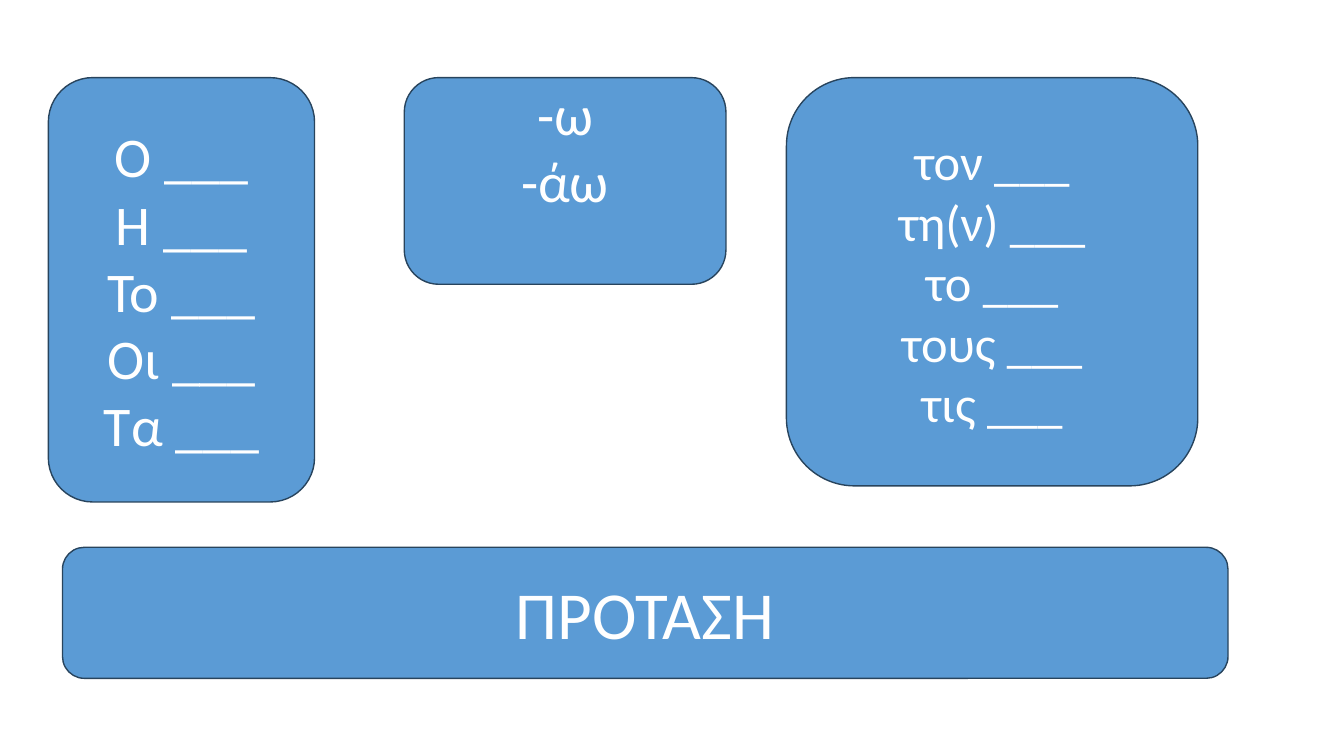
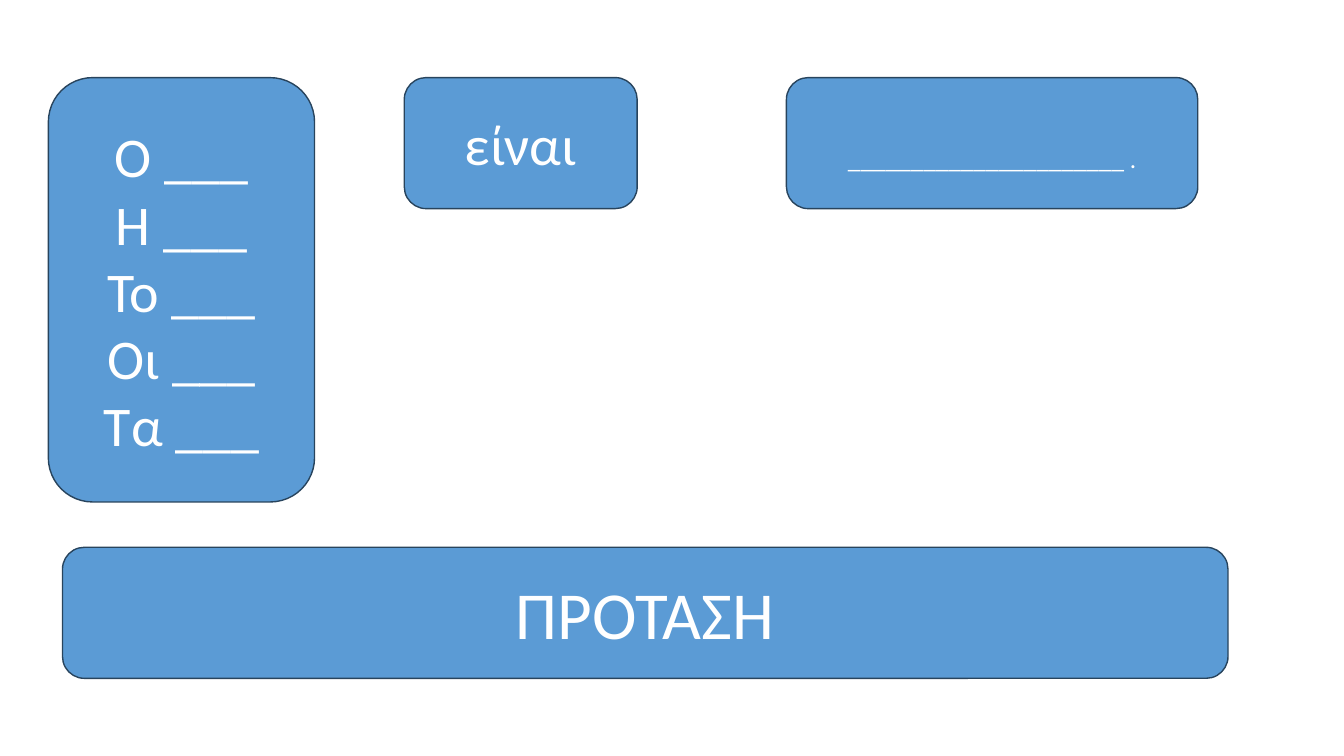
import pptx
import pptx.dml.color
import pptx.enum.shapes
import pptx.enum.text
import pptx.util

Inches = pptx.util.Inches
RGBColor = pptx.dml.color.RGBColor

BLUE = RGBColor(0x5B, 0x9B, 0xD5)
NAVY = RGBColor(0x28, 0x44, 0x5D)
WHITE = RGBColor(0xFF, 0xFF, 0xFF)

# Columns and heights shared by the slides
TOP = 0.77
SUBJECT_LEFT, VERB_LEFT, OBJECT_LEFT = 0.48, 4.01, 7.8
OBJECT_WIDTH = 4.08
ROW_HEIGHT = 1.3
BLANK = "___"


class SentenceDeck:
    """Holds the box style and the current slide."""

    FONT = {"name": "Calibri", "bold": False}
    FRAME = {"word_wrap": True,
             "vertical_anchor": pptx.enum.text.MSO_ANCHOR.MIDDLE}

    def __init__(self):
        self.deck = pptx.Presentation()
        self.deck.slide_width = Inches(13.33)
        self.deck.slide_height = Inches(7.5)
        self.page = None

    def add_page(self):
        self.page = self.deck.slides.add_slide(self.deck.slide_layouts[6])

    def add_box(self, left, top, width, height, lines, size, **margins):
        """Draw a rounded box with one centred paragraph per line."""
        box = self.page.shapes.add_shape(
            pptx.enum.shapes.MSO_SHAPE.ROUNDED_RECTANGLE,
            Inches(left), Inches(top), Inches(width), Inches(height))
        box.shadow.inherit = False
        box.fill.solid()
        box.fill.fore_color.rgb = BLUE
        box.line.color.rgb = NAVY
        box.line.width = pptx.util.Pt(1)

        frame = box.text_frame
        for name, value in {**self.FRAME, **margins}.items():
            setattr(frame, name, value)
        for index, line in enumerate(lines):
            para = frame.paragraphs[0] if index == 0 else frame.add_paragraph()
            para.alignment = pptx.enum.text.PP_ALIGN.CENTER
            span = para.add_run()
            span.text = line
            span.font.color.rgb = WHITE
            for name, value in {**self.FONT, "size": pptx.util.Pt(size)}.items():
                setattr(span.font, name, value)

    def add_subject(self):
        articles = ["Ο", "Η", "Το", "Οι", "Τα"]
        self.add_box(SUBJECT_LEFT, TOP, 2.64, 4.21,
                     [f"{article} {BLANK}" for article in articles], 40)

    def add_verb(self, width, height, lines, **margins):
        self.add_box(VERB_LEFT, TOP, width, height, lines, 40, **margins)

    def add_object(self, height, lines, size, **margins):
        self.add_box(OBJECT_LEFT, TOP, OBJECT_WIDTH, height, lines, size, **margins)

    def add_sentence_band(self):
        self.add_box(0.62, 5.43, 11.56, ROW_HEIGHT, ["ΠΡΟΤΑΣΗ"], 48)


def main():
    lesson = SentenceDeck()

    # Subject, verb ending and object
    lesson.add_page()
    lesson.add_subject()
    lesson.add_verb(3.19, 2.05, ["-ω", "-άω"], margin_bottom=Inches(0.73))
    articles = ["τον", "τη(ν)", "το", "τους", "τις"]
    lesson.add_object(4.05, [f"{article} {BLANK}" for article in articles], 36)
    lesson.add_sentence_band()

    # Subject, "to be" and complement
    lesson.add_page()
    lesson.add_subject()
    lesson.add_verb(2.31, ROW_HEIGHT, ["είναι"])
    lesson.add_object(ROW_HEIGHT, ["_" * 22 + " ."], 18, margin_top=Inches(0.35))
    lesson.add_sentence_band()

    lesson.deck.save("out.pptx")


if __name__ == "__main__":
    main()
